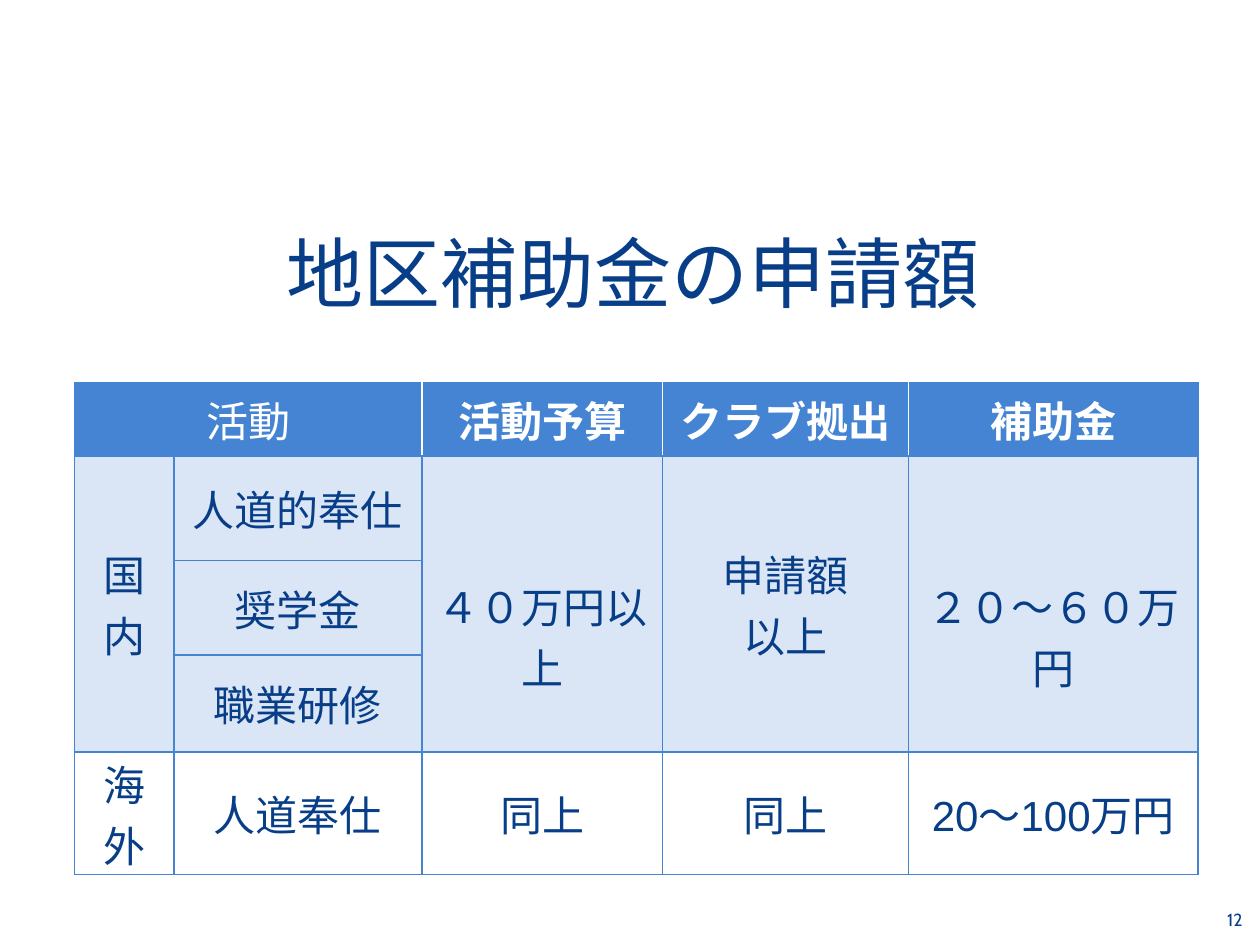
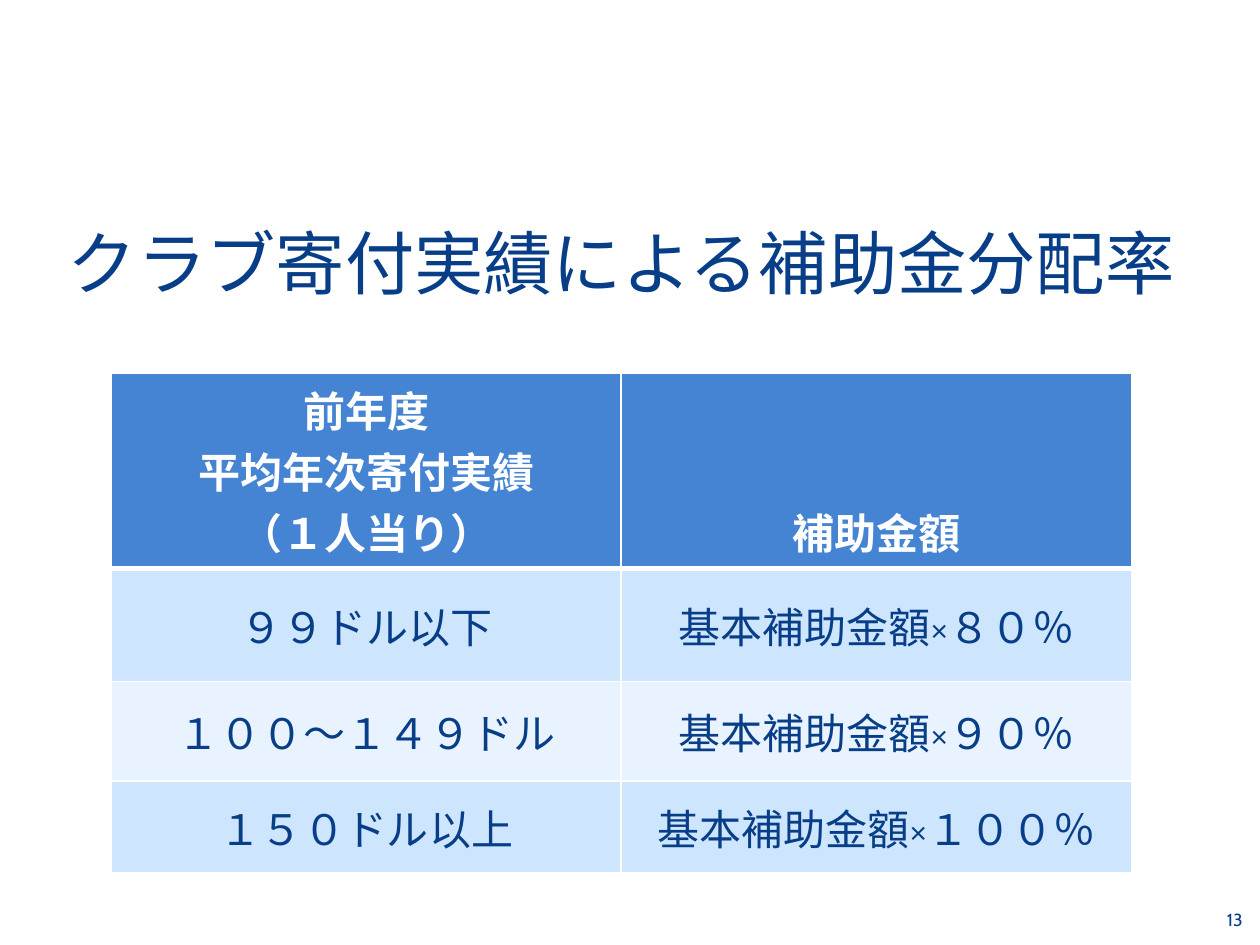
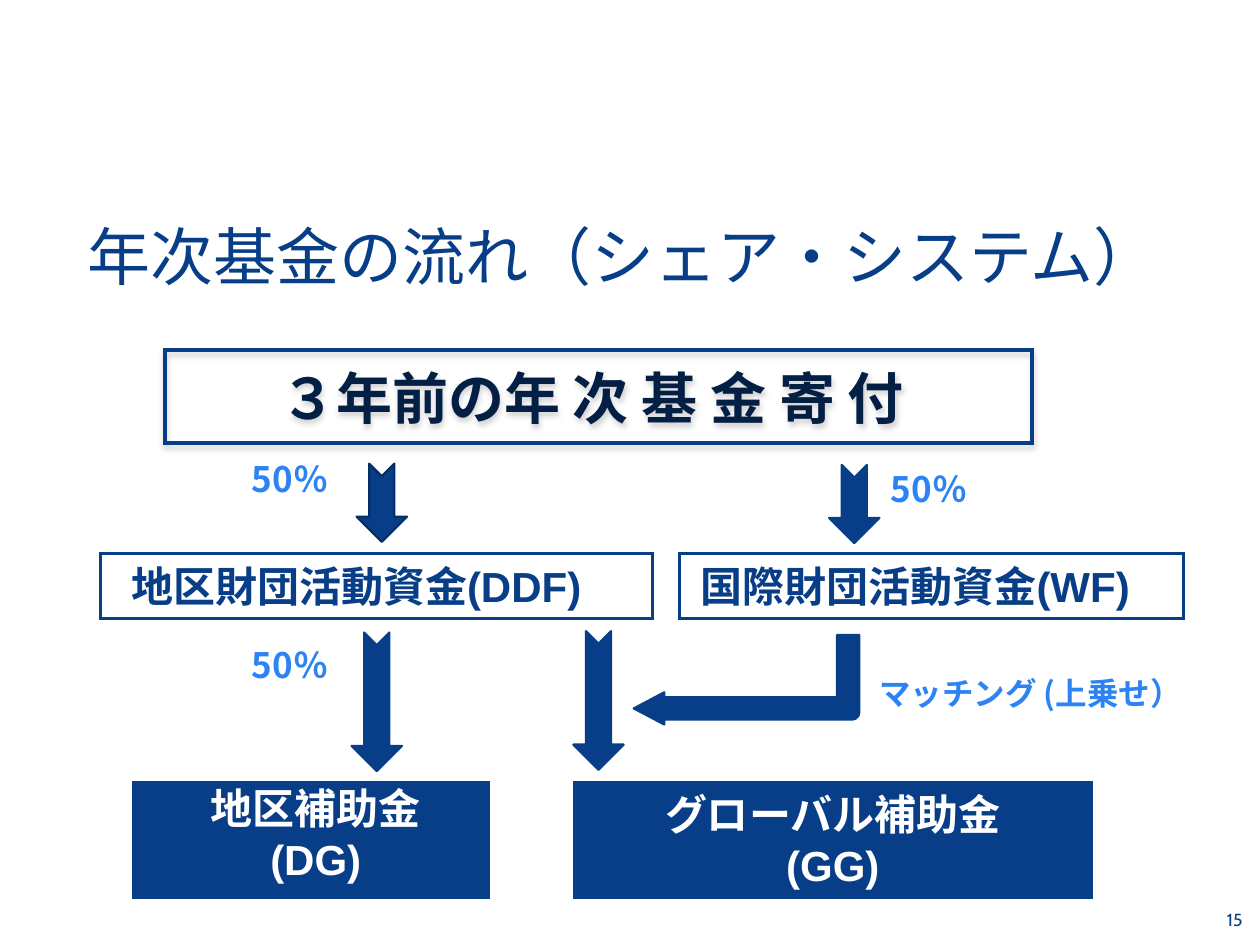
import lxml.etree
import pptx
import pptx.dml.color
import pptx.enum.shapes
import pptx.enum.text
import pptx.oxml.ns
import pptx.util

RGBColor = pptx.dml.color.RGBColor
NAVY = RGBColor(0x07, 0x3E, 0x87)
DARK_NAVY = RGBColor(0x05, 0x2E, 0x65)
INK = RGBColor(0x04, 0x1F, 0x44)
BLUE = RGBColor(0x45, 0x84, 0xD3)
BRIGHT_BLUE = RGBColor(0x2D, 0x83, 0xF4)
PALE_BLUE = RGBColor(0xDA, 0xE6, 0xF6)
BAND_DARK = RGBColor(0xCE, 0xE5, 0xFE)
BAND_LIGHT = RGBColor(0xE8, 0xF3, 0xFF)
WHITE = RGBColor(0xFF, 0xFF, 0xFF)

JAPANESE = "Noto Sans CJK JP"
NARROW = "Arial Narrow"
Inches = pptx.util.Inches
qn = pptx.oxml.ns.qn
ALIGN = pptx.enum.text.PP_ALIGN
ANCHOR = pptx.enum.text.MSO_ANCHOR
SHAPE = pptx.enum.shapes.MSO_SHAPE


def write_text(frame, text, size=24, font="Arial", east_asian=JAPANESE, color=NAVY,
               bold=False, align=ALIGN.CENTER, line_spacing=None, space_before=0):
    """Fill a text frame, one paragraph per line of text."""
    frame.word_wrap = True
    for index, line in enumerate(text.split("\n")):
        paragraph = frame.add_paragraph() if index else frame.paragraphs[0]
        paragraph.alignment = align
        if line_spacing:
            paragraph.line_spacing = line_spacing
        if index and space_before:
            paragraph.space_before = pptx.util.Pt(space_before)
        run = paragraph.add_run()
        run.text = line
        run.font.size = pptx.util.Pt(size)
        run.font.bold = bold
        run.font.color.rgb = color
        run.font.name = font
        lxml.etree.SubElement(run.font._element, qn("a:ea"), typeface=east_asian)


def style_cell(cell, fill, left, right, top, bottom, bottom_width=1):
    """Set the fill and the four borders of a cell."""
    cell.fill.solid()
    cell.fill.fore_color.rgb = fill
    borders = (("L", left, 1), ("R", right, 1), ("T", top, 1), ("B", bottom, bottom_width))
    for index, (side, color, width) in enumerate(borders):
        line = lxml.etree.Element(qn("a:ln" + side), w=str(pptx.util.Pt(width)))
        solid = lxml.etree.SubElement(line, qn("a:solidFill"))
        lxml.etree.SubElement(solid, qn("a:srgbClr"), val=str(color))
        cell._tc.get_or_add_tcPr().insert(index, line)


deck = pptx.Presentation()
deck.slide_width, deck.slide_height = Inches(10), Inches(7.5)

# Titles and page numbers
pages = []
for heading, left, top, size, font, east_asian, number in (
        ("地区補助金の申請額", 0.53, 1.47, 44, "Cabin", JAPANESE, "12"),
        ("クラブ寄付実績による補助金分配率", 0.43, 1.39, 39.6, "Cabin", JAPANESE, "13"),
        ("年次基金の流れ（シェア・システム）", 0.44, 1.34, 36, NARROW, NARROW, "15")):
    page = deck.slides.add_slide(deck.slide_layouts[5])
    title = page.shapes.title
    title.left, title.top, title.width, title.height = map(Inches, (left, top, 9, 1.37))
    title.text_frame.auto_size = pptx.enum.text.MSO_AUTO_SIZE.NONE
    title.text_frame.vertical_anchor = ANCHOR.MIDDLE
    write_text(title.text_frame, heading, size=size, font=font, east_asian=east_asian)

    page_number = page.shapes.add_textbox(*map(Inches, (9.6, 7.1, 0.4, 0.4))).text_frame
    page_number.margin_left = page_number.margin_right = 0
    page_number.vertical_anchor = ANCHOR.MIDDLE
    write_text(page_number, number, size=10, font="Cabin")
    pages.append(page)
amounts_page, rates_page, flow_page = pages

# Grant amounts: None marks a cell covered by a merge
amount_rows = (
    ("活動", None, "活動予算", "クラブ拠出", "補助金"),
    ("国内", "人道的奉仕", "４０万円以上", "申請額\n以上", "２０～６０万円"),
    (None, "奨学金", None, None, None),
    (None, "職業研修", None, None, None),
    ("海外", "人道奉仕", "同上", "同上", "20～100万円"))
amounts = amounts_page.shapes.add_table(5, 5, *map(Inches, (0.59, 3.04, 8.92, 3.9))).table
for column, width in zip(amounts.columns, (0.79, 1.97, 1.91, 1.95, 2.3)):
    column.width = Inches(width)
for row, height in zip(amounts.rows, (0.58, 0.83, 0.75, 0.77, 0.97)):
    row.height = Inches(height)
amounts.cell(0, 0).merge(amounts.cell(0, 1))
for c in (0, 2, 3, 4):
    amounts.cell(1, c).merge(amounts.cell(3, c))
for r, texts in enumerate(amount_rows):
    header = r == 0
    fill = BLUE if header else WHITE if r == 4 else PALE_BLUE
    for c, text in enumerate(texts):
        cell = amounts.cell(r, c)
        style_cell(cell, fill, WHITE if header and c > 0 else BLUE,
                   WHITE if header and c < 4 else BLUE, BLUE, BLUE)
        cell.margin_left = cell.margin_right = Inches(0.07)
        cell.margin_top = cell.margin_bottom = 0
        cell.vertical_anchor = ANCHOR.MIDDLE
        if text:
            write_text(cell.text_frame, text, color=WHITE if header else NAVY,
                       bold=header and c > 0,
                       font="Cabin" if c == 1 or (header and c > 0) else "Arial")
for c in (2, 4):
    amounts.cell(1, c).margin_top = Inches(0.5)

# Distribution rates by donation record
rate_rows = (
    ("前年度\n平均年次寄付実績\n（１人当り）", "補助金額"),
    ("９９ドル以下", "基本補助金額×８０％"),
    ("１００～１４９ドル", "基本補助金額×９０％"),
    ("１５０ドル以上", "基本補助金額×１００％"))
rates = rates_page.shapes.add_table(4, 2, *map(Inches, (0.88, 2.96, 8.1, 3.97))).table
for row, height in zip(rates.rows, (1.55, 0.9, 0.79, 0.73)):
    row.height = Inches(height)
for r, texts in enumerate(rate_rows):
    header = r == 0
    fill = BLUE if header else BAND_DARK if r % 2 else BAND_LIGHT
    for c, text in enumerate(texts):
        cell = rates.cell(r, c)
        style_cell(cell, fill, WHITE, WHITE, WHITE, WHITE, 3 if header else 1)
        cell.vertical_anchor = ANCHOR.TOP if header else ANCHOR.MIDDLE
        write_text(cell.text_frame, text, font="Cabin", bold=header,
                   color=WHITE if header else NAVY,
                   line_spacing=3 if header and c == 1 else None)

# Fund boxes: place, fill, line width, left inset, anchor, text and its format
white_text = dict(color=WHITE, bold=True)
fund_text = dict(bold=True, align=ALIGN.LEFT)
fund_boxes = (
    ((1.31, 2.78, 6.88, 0.74), None, 2.25, 0, ANCHOR.MIDDLE, "３年前の年 次 基 金 寄 付",
     dict(size=32, font=JAPANESE, color=INK, bold=True)),
    ((0.8, 4.39, 4.38, 0.52), None, 1.75, 0.24, ANCHOR.MIDDLE, "地区財団活動資金(DDF)", fund_text),
    ((5.39, 4.39, 4, 0.52), None, 1.75, 0.17, ANCHOR.MIDDLE, "国際財団活動資金(WF)", fund_text),
    ((1.06, 6.21, 2.82, 0.91), NAVY, 1.75, 0.17, ANCHOR.TOP, "地区補助金\n(DG)",
     dict(white_text, line_spacing=0.9, space_before=3)),
    ((4.56, 6.21, 4.1, 0.91), NAVY, 1.75, 0.1, ANCHOR.TOP, "グローバル補助金\n(GG)", white_text))
for place, fill, line_width, inset, anchor, text, text_format in fund_boxes:
    fund = flow_page.shapes.add_shape(SHAPE.RECTANGLE, *map(Inches, place))
    fund.shadow.inherit = False
    if fill:
        fund.fill.solid()
        fund.fill.fore_color.rgb = fill
    else:
        fund.fill.background()
    fund.line.color.rgb = NAVY
    fund.line.width = pptx.util.Pt(line_width)
    lxml.etree.SubElement(fund._element.spPr.find(qn("a:ln")), qn("a:miter"), lim="800000")
    fund.text_frame.margin_left = Inches(inset)
    fund.text_frame.vertical_anchor = anchor
    write_text(fund.text_frame, text, **text_format)
    if text.startswith("３年前"):
        effects = fund._element.spPr.find(qn("a:effectLst"))
        shadow = lxml.etree.SubElement(
            effects, qn("a:outerShdw"), blurRad=str(pptx.util.Pt(3.1)),
            dist=str(pptx.util.Pt(1.8)), dir="5400000", rotWithShape="0")
        shade = lxml.etree.SubElement(shadow, qn("a:srgbClr"), val="808080")
        lxml.etree.SubElement(shade, qn("a:alpha"), val="35000")

# Flow arrows
NOTCHED = SHAPE.NOTCHED_RIGHT_ARROW
for kind, place, turn, outline in (
        (NOTCHED, (2.72, 3.79, 0.62, 0.4), 90, DARK_NAVY),
        (NOTCHED, (6.47, 3.8, 0.62, 0.4), 90, NAVY),
        (NOTCHED, (2.44, 5.37, 1.1, 0.4), 90, NAVY),
        (NOTCHED, (4.2, 5.36, 1.1, 0.4), 90, NAVY),
        (SHAPE.BENT_ARROW, (5.03, 5.04, 1.79, 0.71), 180, NAVY)):
    flow = flow_page.shapes.add_shape(kind, *map(Inches, place))
    flow.rotation = turn
    flow.shadow.inherit = False
    flow.fill.solid()
    flow.fill.fore_color.rgb = NAVY
    flow.line.color.rgb = outline
    flow.line.width = pptx.util.Pt(1.25)
    if kind == SHAPE.BENT_ARROW:
        for index, share in enumerate((0.25, 0.18, 0.34, 0.08)):
            flow.adjustments[index] = share

# Shares beside the arrows
for text, place, size in (
        ("50％", (1.9, 3.58, 1.12, 0.44), 20),
        ("50％", (6.97, 3.66, 0.91, 0.44), 20),
        ("50％", (1.9, 5.06, 0.89, 0.44), 20),
        ("マッチング (上乗せ）", (6.88, 5.3, 2.76, 0.4), 18)):
    share_label = flow_page.shapes.add_textbox(*map(Inches, place))
    write_text(share_label.text_frame, text, size=size, font=JAPANESE,
               color=BRIGHT_BLUE, bold=True, align=ALIGN.LEFT)

deck.save("out.pptx")
